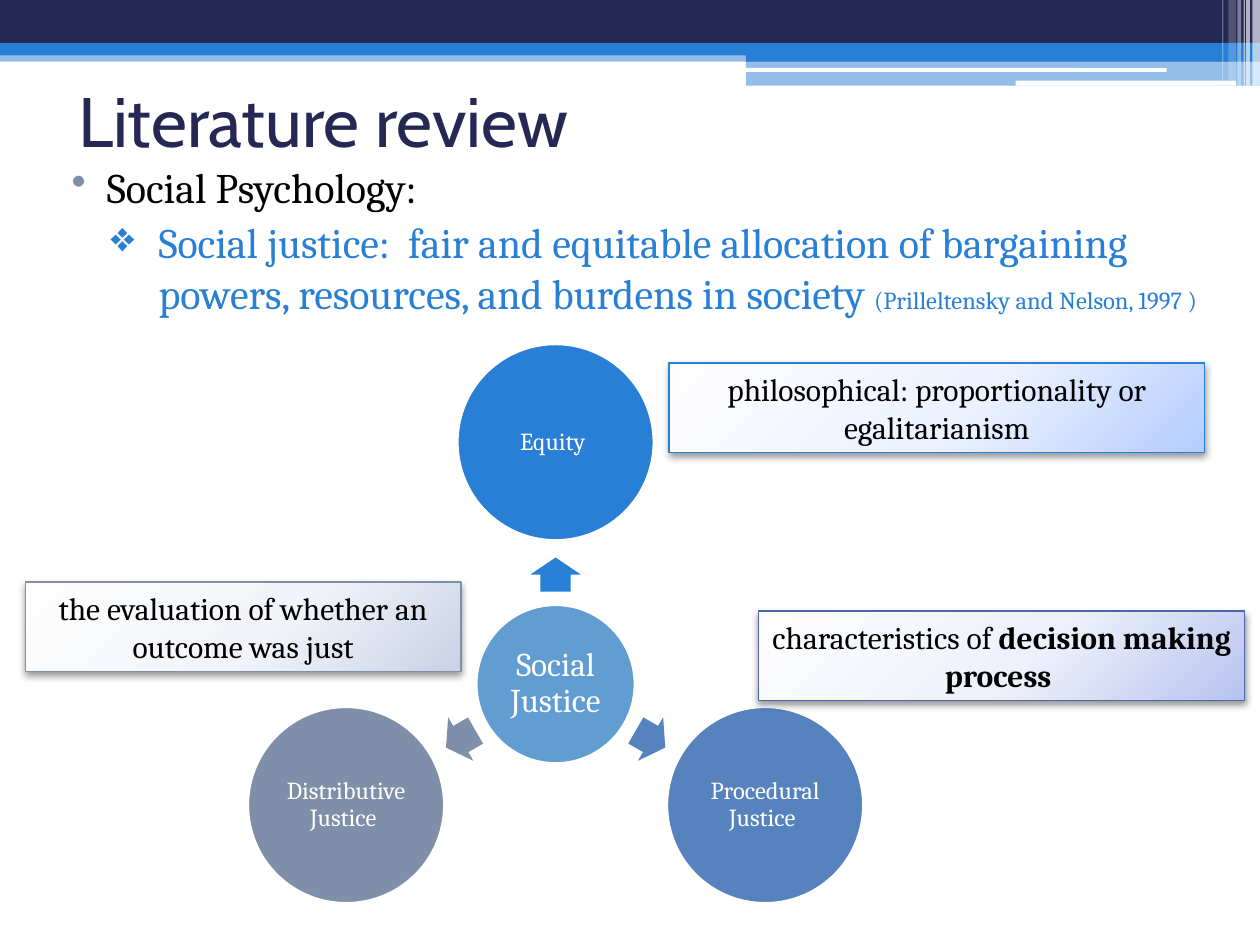
from math import cos, radians, sin

from lxml import etree
from pptx import Presentation
from pptx import util as u
from pptx.dml.color import RGBColor
from pptx.enum import shapes, text
from pptx.oxml import parse_xml
from pptx.oxml.ns import qn

COLORS = {"navy": "242852", "blue": "297FD5", "sky": "629DD1", "steel": "5683BD",
          "slate": "7F8FA9", "indigo": "4A66AC", "white": "FFFFFF", "black": "000000"}
BODY_FONT, TITLE_FONT = "Cambria", "Cabin"
SHAPE = shapes.MSO_SHAPE
ALIGN = text.PP_ALIGN

TITLE = "Literature review"
# Runs are (text, size, bold); bullets are (mark, mark colour, text colour, margin, indent, runs)
BULLETS = [
    ("•", "slate", "black", 0.4, -0.28, [("Social Psychology:", 24, False)]),
    ("❖", "blue", "blue", 0.81, -0.38, [
        ("Social justice:  fair and equitable allocation of bargaining powers, "
         "resources, and burdens in society ", 24, False),
        ("(Prilleltensky and Nelson, 1997 )", 14, False)]),
]
# Header bands: left, top, width, height, colour, opacity %
BANDS = [
    (0, 0.4, 10, 0.09, "blue", 50),
    (0, 0, 10, 0.34, "navy", 100),
    (0, 0.34, 10, 0.1, "blue", 100),
    (5.92, 0.39, 4.08, 0.1, "blue", 100),
    (5.92, 0.48, 4.08, 0.2, "blue", 50),
]
# Rounded white rules: left, top, width, height
RULES = [(5.91, 0.54, 3.35, 0.03), (8.06, 0.64, 1.75, 0.04)]
# White corner stripes: left, width, height, opacity %
STRIPES = [(9.94, 0.06, 0.68, 65), (9.89, 0.03, 0.68, 65), (9.87, 0.01, 0.68, 60),
           (9.82, 0.03, 0.68, 40), (9.75, 0.06, 0.64, 20), (9.7, 0.01, 0.64, 30)]

# Radial diagram: text, colour, angle clockwise from the right
HUB = "Social Justice"
SPOKES = [("Equity ", "blue", 270), ("Procedural Justice ", "steel", 30),
          ("Distributive Justice ", "slate", 150)]
CENTER_X, CENTER_Y = 4.41, 5.43
HUB_SIZE, NODE_SIZE = 1.26, 1.56
NODE_DISTANCE, ARROW_DISTANCE = 1.92, 0.87
ARROW_LENGTH, ARROW_WIDTH = 0.27, 0.4

# Callouts: left, top, width, line colour, gradient colours, runs
CALLOUTS = [
    (5.31, 2.88, 4.25, "blue", ("FEFEFF", "EDF2FF", "B4CCFF"),
     [("philosophical: proportionality or egalitarianism", 18, False)]),
    (6.02, 4.85, 3.86, "indigo", ("FEFEFF", "EEF1FB", "B8C3EF"),
     [("characteristics of ", 18, False), ("decision making process ", 18, True)]),
    (0.2, 4.62, 3.46, "slate", ("FEFEFE", "F2F4F9", "C9D3E6"),
     [("the evaluation of whether an outcome was just", 18, False)]),
]
CALLOUT_HEIGHT = 0.71
GRADIENT_STOPS = (0, 55, 100)
NAMESPACE = 'xmlns:a="http://schemas.openxmlformats.org/drawingml/2006/main"'


def rgb(name):
    return RGBColor.from_string(COLORS[name])


def add_shape(slide, kind, left, top, width, height, color, opacity=100):
    shape = slide.shapes.add_shape(kind, *map(u.Inches, (left, top, width, height)))
    shape.shadow.inherit = False
    shape.fill.solid()
    shape.fill.fore_color.rgb = rgb(color)
    shape.line.fill.background()
    if opacity < 100:
        value = shape.fill._xPr.find(".//" + qn("a:srgbClr"))
        etree.SubElement(value, qn("a:alpha"), val=str(opacity * 1000))
    return shape


def write_runs(paragraph, runs, color, font=BODY_FONT):
    for words, size, bold in runs:
        run = paragraph.add_run()
        run.text = words
        run.font.size = u.Pt(size)
        run.font.bold = bold
        run.font.name = font
        run.font.color.rgb = rgb(color)


def center_text(shape, runs, color):
    frame = shape.text_frame
    frame.word_wrap = True
    frame.vertical_anchor = text.MSO_ANCHOR.MIDDLE
    paragraph = frame.paragraphs[0]
    paragraph.alignment = ALIGN.CENTER
    write_runs(paragraph, runs, color)
    return frame


def add_circle(slide, words, color, x, y, diameter, size, inset):
    circle = add_shape(slide, SHAPE.OVAL, x - diameter / 2, y - diameter / 2,
                       diameter, diameter, color)
    circle.line.color.rgb = rgb("white")
    circle.line.width = u.Pt(1.5)
    frame = center_text(circle, [(words, size, False)], "white")
    frame.paragraphs[0].line_spacing = 0.9
    frame.margin_left = frame.margin_right = u.Inches(inset)
    frame.margin_top = frame.margin_bottom = u.Inches(inset)


def add_header(slide):
    for band in BANDS:
        add_shape(slide, SHAPE.RECTANGLE, *band)
    for rule in RULES:
        add_shape(slide, SHAPE.ROUNDED_RECTANGLE, *rule, "white")
    for left, width, height, opacity in STRIPES:
        add_shape(slide, SHAPE.RECTANGLE, left, 0, width, height, "white", opacity)


def add_title(slide):
    title = slide.shapes.title
    title.left, title.top, title.width, title.height = map(u.Inches, (0.52, 0.36, 9, 1.17))
    title.text_frame.vertical_anchor = text.MSO_ANCHOR.MIDDLE
    paragraph = title.text_frame.paragraphs[0]
    paragraph.alignment = ALIGN.LEFT
    write_runs(paragraph, [(TITLE, 40, False)], "navy", TITLE_FONT)


def add_bullets(slide):
    box = slide.shapes.add_textbox(*map(u.Inches, (0.35, 1.23, 9.31, 1.4)))
    frame = box.text_frame
    frame.word_wrap = True
    for index, (mark, mark_color, color, margin, indent, runs) in enumerate(BULLETS):
        paragraph = frame.add_paragraph() if index else frame.paragraphs[0]
        paragraph.space_before = u.Pt(3)
        write_runs(paragraph, runs, color)
        properties = paragraph._p.get_or_add_pPr()
        properties.set("marL", str(u.Inches(margin)))
        properties.set("indent", str(u.Inches(indent)))
        bullet_color = etree.SubElement(properties, qn("a:buClr"))
        etree.SubElement(bullet_color, qn("a:srgbClr"), val=COLORS[mark_color])
        etree.SubElement(properties, qn("a:buChar"), char=mark)


def add_diagram(slide):
    add_circle(slide, HUB, "sky", CENTER_X, CENTER_Y, HUB_SIZE, 19, 0.03)
    for words, color, angle in SPOKES:
        across, down = cos(radians(angle)), sin(radians(angle))
        arrow = add_shape(slide, SHAPE.RIGHT_ARROW,
                          CENTER_X + ARROW_DISTANCE * across - ARROW_LENGTH / 2,
                          CENTER_Y + ARROW_DISTANCE * down - ARROW_WIDTH / 2,
                          ARROW_LENGTH, ARROW_WIDTH, color)
        arrow.adjustments[0], arrow.adjustments[1] = 0.6, 0.5
        arrow.rotation = angle
        add_circle(slide, words, color, CENTER_X + NODE_DISTANCE * across,
                   CENTER_Y + NODE_DISTANCE * down, NODE_SIZE, 14, 0.02)


def add_callout(slide, left, top, width, line_color, gradient, runs):
    box = add_shape(slide, SHAPE.RECTANGLE, left, top, width, CALLOUT_HEIGHT, "white")
    box.line.color.rgb = rgb(line_color)
    box.line.width = u.Pt(0.75)
    center_text(box, runs, "black")
    # Radial gradient spreading from beyond the top left corner
    stops = "".join(f'<a:gs pos="{stop * 1000}"><a:srgbClr val="{color}"/></a:gs>'
                    for stop, color in zip(GRADIENT_STOPS, gradient))
    properties = box._element.spPr
    properties.replace(properties.find(qn("a:solidFill")), parse_xml(
        f'<a:gradFill {NAMESPACE} rotWithShape="1"><a:gsLst>{stops}</a:gsLst>'
        '<a:path path="circle"><a:fillToRect l="-40000" t="-90000" r="140000" b="190000"/>'
        '</a:path></a:gradFill>'))
    # Soft shadow below the box
    properties.find(qn("a:effectLst")).append(parse_xml(
        f'<a:outerShdw {NAMESPACE} blurRad="{u.Pt(4.1)}" dist="{u.Pt(2)}" dir="5400000" '
        'rotWithShape="0"><a:srgbClr val="000000"><a:alpha val="40000"/></a:srgbClr>'
        '</a:outerShdw>'))


def main():
    presentation = Presentation()
    presentation.slide_width, presentation.slide_height = u.Inches(10), u.Inches(7.5)
    slide = presentation.slides.add_slide(presentation.slide_layouts[5])
    add_header(slide)
    add_title(slide)
    add_bullets(slide)
    add_diagram(slide)
    for callout in CALLOUTS:
        add_callout(slide, *callout)
    presentation.save("out.pptx")


if __name__ == "__main__":
    main()
